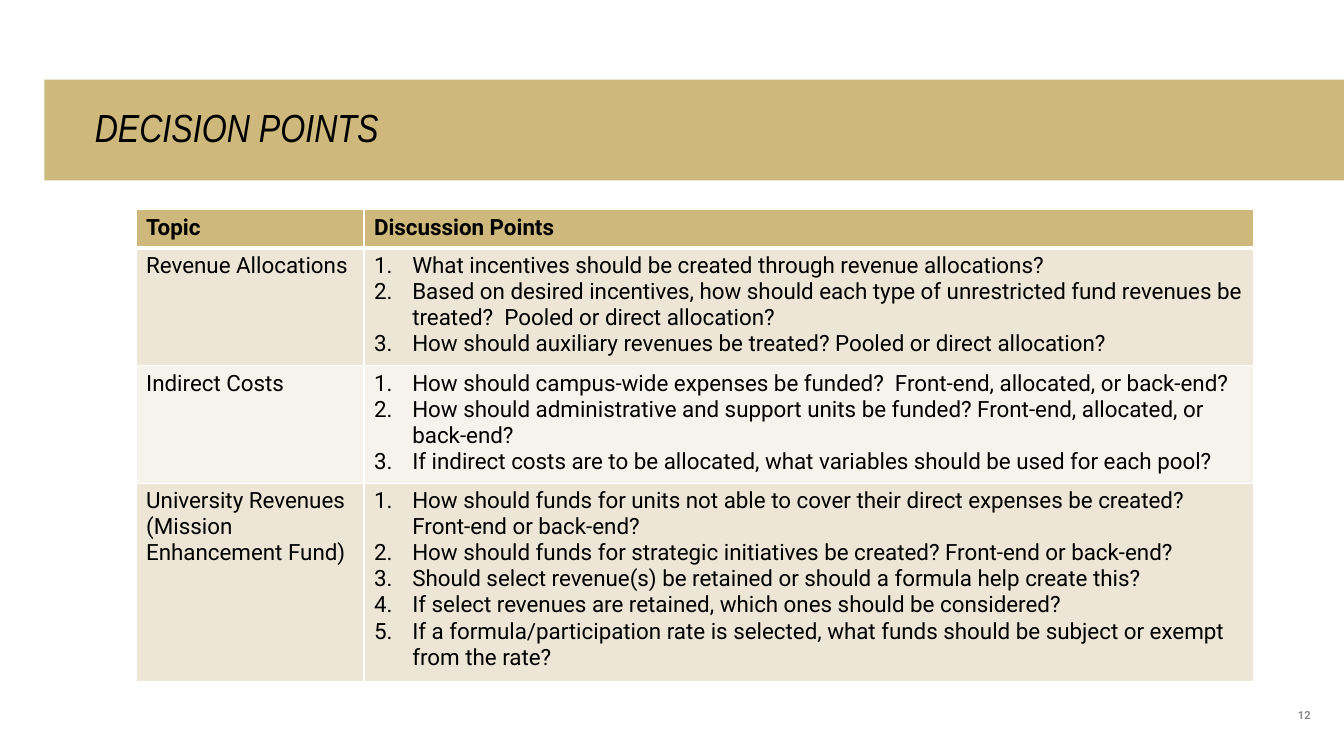
from dataclasses import dataclass

import pptx
import pptx.dml.color
import pptx.enum.shapes
import pptx.enum.text
import pptx.oxml.ns
import pptx.util
from lxml import etree

Inches = pptx.util.Inches
Align = pptx.enum.text.PP_ALIGN
Anchor = pptx.enum.text.MSO_ANCHOR
qn = pptx.oxml.ns.qn


@dataclass(frozen=True)
class Theme:
    gold: str = "CFB87C"
    sand: str = "EDE6D7"
    cream: str = "F6F3EC"
    white: str = "FFFFFF"
    black: str = "000000"
    gray: str = "8C8C8C"
    title_font: str = "Arial Narrow"
    body_font: str = "Roboto"
    title_size: int = 28
    body_size: int = 16
    number_size: int = 8


@dataclass(frozen=True)
class Topic:
    name: str
    points: tuple[str, ...]
    height: float


THEME = Theme()
HEADER = ("Topic", "Discussion Points")
HEADER_HEIGHT = 0.38
COLUMNS = (2.26, 8.82)
TOPICS = (
    Topic("Revenue Allocations", (
        "What incentives should be created through revenue allocations?",
        "Based on desired incentives, how should each type of unrestricted fund "
        "revenues be treated?  Pooled or direct allocation?",
        "How should auxiliary revenues be treated? Pooled or direct allocation?",
    ), 1.13),
    Topic("Indirect Costs", (
        "How should campus-wide expenses be funded?  Front-end, allocated, or back-end?",
        "How should administrative and support units be funded? Front-end, allocated, or back-end?",
        "If indirect costs are to be allocated, what variables should be used for each pool?",
    ), 1.13),
    Topic("University Revenues (Mission Enhancement Fund)", (
        "How should funds for units not able to cover their direct expenses be created?  "
        "Front-end or back-end?",
        "How should funds for strategic initiatives be created? Front-end or back-end?",
        "Should select revenue(s) be retained or should a formula help create this?",
        "If select revenues are retained, which ones should be considered?",
        "If a formula/participation rate is selected, what funds should be subject or exempt "
        "from the rate?",
    ), 1.9),
)


def rgb(color: str) -> pptx.dml.color.RGBColor:
    return pptx.dml.color.RGBColor.from_string(color)


def write(p, text: str, *, font: str = THEME.body_font, size: int = THEME.body_size,
          color: str = THEME.black, bold: bool = False, italic: bool = False,
          align=Align.LEFT, spacing: float = 1.0, numbered: bool = False) -> None:
    if numbered:
        pPr = p._p.get_or_add_pPr()
        pPr.set("marL", str(Inches(0.38)))
        pPr.set("indent", str(-Inches(0.38)))
        etree.SubElement(pPr, qn("a:buFont"), typeface="+mj-lt")
        etree.SubElement(pPr, qn("a:buAutoNum"), type="arabicPeriod")
    p.alignment = align
    p.line_spacing = spacing
    r = p.add_run()
    r.text = text
    r.font.name = font
    r.font.size = pptx.util.Pt(size)
    r.font.bold = bold
    r.font.italic = italic
    r.font.color.rgb = rgb(color)


def set_frame(tf, anchor, left: float, top: float, right: float, bottom: float) -> None:
    tf.word_wrap = True
    tf.vertical_anchor = anchor
    tf.margin_left, tf.margin_top = Inches(left), Inches(top)
    tf.margin_right, tf.margin_bottom = Inches(right), Inches(bottom)


def style_cell(cell, fill: str, top: float, bottom: float) -> None:
    tcPr = cell._tc.get_or_add_tcPr()
    for side, width in {"L": 1, "R": 1, "T": top, "B": bottom}.items():
        ln = etree.SubElement(tcPr, qn(f"a:ln{side}"), w=str(pptx.util.Pt(width)))
        solid = etree.SubElement(ln, qn("a:solidFill"))
        etree.SubElement(solid, qn("a:srgbClr"), val=THEME.white)
    cell.fill.solid()
    cell.fill.fore_color.rgb = rgb(fill)


def add_title(s) -> None:
    sp = s.shapes.add_shape(pptx.enum.shapes.MSO_SHAPE.RECTANGLE,
                            Inches(0.44), Inches(0.79), Inches(12.89), Inches(1))
    sp.shadow.inherit = False
    sp.fill.solid()
    sp.fill.fore_color.rgb = rgb(THEME.gold)
    sp.line.fill.background()
    set_frame(sp.text_frame, Anchor.MIDDLE, 0.5, 0.05, 1, 0.05)
    write(sp.text_frame.paragraphs[0], "DECISION POINTS", font=THEME.title_font,
          size=THEME.title_size, italic=True, spacing=0.9)


def add_number(s) -> None:
    sp = s.shapes.add_textbox(Inches(12.15), Inches(6.66), Inches(0.85), Inches(0.5))
    set_frame(sp.text_frame, Anchor.BOTTOM, 0, 0, 0, 0)
    write(sp.text_frame.paragraphs[0], "12", size=THEME.number_size, color=THEME.gray,
          bold=True, align=Align.RIGHT)


def add_topics(s) -> None:
    heights = (HEADER_HEIGHT, *(topic.height for topic in TOPICS))
    table = s.shapes.add_table(len(heights), len(COLUMNS), Inches(1.35), Inches(2.08),
                               Inches(sum(COLUMNS)), Inches(sum(heights))).table
    for column, width in zip(table.columns, COLUMNS):
        column.width = Inches(width)
    for row, height in zip(table.rows, heights):
        row.height = Inches(height)
    for cell, text in zip(table.rows[0].cells, HEADER):
        style_cell(cell, THEME.gold, 1, 3)
        write(cell.text_frame.paragraphs[0], text, bold=True)
    for i, topic in enumerate(TOPICS, start=1):
        name, points = table.rows[i].cells
        for cell in (name, points):
            style_cell(cell, THEME.sand if i % 2 else THEME.cream, 3 if i == 1 else 1, 1)
        write(name.text_frame.paragraphs[0], topic.name)
        tf = points.text_frame
        for j, point in enumerate(topic.points):
            write(tf.add_paragraph() if j else tf.paragraphs[0], point, numbered=True)


def main() -> None:
    prs = pptx.Presentation()
    prs.slide_width, prs.slide_height = Inches(13.33), Inches(7.5)
    s = prs.slides.add_slide(prs.slide_layouts[6])
    add_title(s)
    add_number(s)
    add_topics(s)
    prs.save("out.pptx")


if __name__ == "__main__":
    main()
